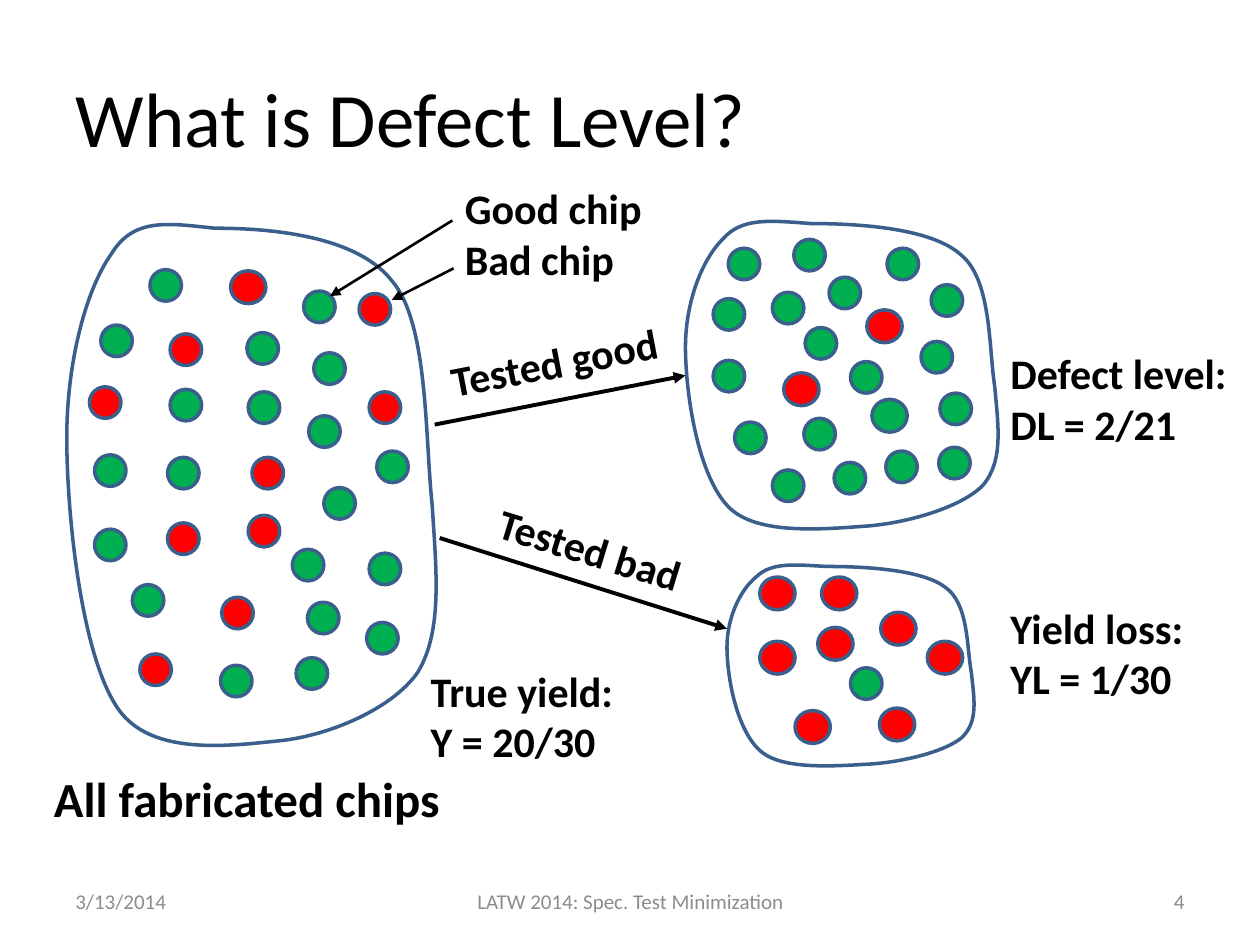
from lxml.etree import SubElement
from pptx import Presentation
from pptx.dml.color import RGBColor
from pptx.enum.shapes import MSO_CONNECTOR as LINK, MSO_SHAPE as SHAPE
from pptx.enum.text import MSO_ANCHOR as ANCHOR, PP_ALIGN as ALIGN
from pptx.oxml.ns import qn
from pptx.util import Inches, Pt

hue = RGBColor.from_string
GREEN, RED, BLUE, BLACK, GRAY = "00B050", "FF0000", "3A5F8C", "000000", "8C8C8C"
CELL = Inches(0.1)  # the slide is a grid of 100 columns by 75 rows


def grid(*cells):
    return [int(cell * CELL) for cell in cells]


def write(text, box, shape=None, size=24, color=BLACK, bold=True, turn=0,
          wrap=True, align=ALIGN.LEFT, anchor=ANCHOR.TOP):
    shape = shape or shapes.add_textbox(0, 0, 0, 0)
    shape.left, shape.top, shape.width, shape.height = grid(*box)
    shape.rotation = turn
    frame = shape.text_frame
    frame.text = text
    frame.word_wrap = wrap
    frame.vertical_anchor = anchor
    for para in frame.paragraphs:
        para.alignment = align
        font = para.runs[0].font
        font.name, font.size, font.bold = "Calibri", Pt(size), bold
        font.color.rgb = hue(color)


deck = Presentation()
deck.slide_width, deck.slide_height = grid(100, 75)
slide = deck.slides.add_slide(deck.slide_layouts[5])
shapes = slide.shapes

# Title and footer
write("What is Defect Level?", (5, 3, 90, 12.5), shape=shapes.title, size=44,
      bold=False, anchor=ANCHOR.MIDDLE)
for text, left, width, align in [
    ("3/13/2014", 5, 23.3, ALIGN.LEFT),
    ("LATW 2014: Spec. Test Minimization", 34.2, 31.7, ALIGN.CENTER),
    ("4", 71.7, 23.3, ALIGN.RIGHT),
]:
    write(text, (left, 69.5, width, 4), size=12, color=GRAY, bold=False,
          align=align, anchor=ANCHOR.MIDDLE)

# Pools: one curved outline in shares of its box, three points to a curve
START = (0.4, 0.01)
CURVE = [
    (0.53, 0.01), (0.78, 0.02), (0.88, 0.11),
    (0.98, 0.19), (0.97, 0.41), (0.99, 0.54),
    (1.0, 0.66), (1.02, 0.78), (0.95, 0.86),
    (0.88, 0.93), (0.71, 0.98), (0.58, 0.99),
    (0.44, 1.0), (0.23, 1.02), (0.14, 0.93),
    (0.04, 0.83), (0, 0.56), (0, 0.41),
    (0, 0.27), (0.05, 0.13), (0.12, 0.06),
    (0.18, -0.01), (0.27, 0), START,
]
for left, top, width, height in [
    (5.3, 17.7, 29.3, 41.5),   # all chips
    (54.4, 17.5, 24.8, 24.5),  # tested good
    (57.7, 44.8, 19.6, 16),    # tested bad
]:
    first, *rest = [grid(left + x * width, top + y * height)
                    for x, y in [START] + CURVE]
    form = shapes.build_freeform(*first)
    form.add_line_segments(rest, close=True)
    pool = form.convert_to_shape()
    pool.shadow.inherit = False
    pool.fill.background()
    pool.line.color.rgb, pool.line.width = hue(BLUE), Pt(2)
    # Turn each three straight segments into one Bézier curve
    steps = list(pool._element.iter(qn("a:lnTo")))
    for i in range(0, len(steps), 3):
        bend = steps[i]
        bend.tag = qn("a:cubicBezTo")
        for step in steps[i + 1:i + 3]:
            bend.append(step[0])
            step.getparent().remove(step)

# Chips: colour, width, height and top left corners
CHIPS = [
    (GREEN, 2.5, 2.5, [
        # all chips
        (11.9, 21.4), (24.1, 23.1), (19.6, 26.4), (24.9, 28), (13.5, 30.9),
        (19.7, 31.1), (24.5, 33), (8, 25.8), (10.5, 46.4), (29.3, 43.9),
        (25.7, 38.7), (7.5, 42), (29.9, 35.8), (13.3, 36.3), (7.5, 36.1),
        (17.5, 52.8), (23.5, 52.2), (29.1, 49.4), (24.4, 47.8), (23.2, 43.6),
        # tested good
        (57.8, 19.7), (56.6, 23.7), (63, 19), (61.3, 23.2), (63.9, 26),
        (56.6, 28.6), (65.8, 22), (70.4, 19.7), (58.3, 33.5), (63.8, 33.2),
        (74.6, 31.2), (67.5, 28.7), (73.1, 27.1), (73.9, 22.6), (61.3, 37.3),
        (66.2, 36.7), (70.3, 35.8), (74.5, 35.5),
        # tested bad
        (67.5, 53)]),
    (GREEN, 2.8, 2.6, [(69.2, 31.7)]),
    (RED, 2.5, 2.5, [
        (13.5, 26.5), (7.1, 30.7), (29.3, 31.1), (17.6, 47.4), (19.7, 40.9),
        (20, 36.3), (13.3, 41.5), (28.5, 23.3), (11.1, 51.9)]),
    (RED, 2.8, 2.6, [
        (18.3, 21.5), (68.8, 24.6), (62.2, 29.6),
        (63.1, 56.4), (69.8, 56.2), (73.6, 50.9), (69.9, 48.6), (60.3, 50.9),
        (64.9, 49.8), (60.3, 45.8), (65.2, 45.8)]),
]
for color, width, height, spots in CHIPS:
    for left, top in spots:
        chip = shapes.add_shape(SHAPE.OVAL, *grid(left, top, width, height))
        chip.shadow.inherit = False
        chip.fill.solid()
        chip.fill.fore_color.rgb = hue(color)
        chip.line.color.rgb, chip.line.width = hue(BLUE), Pt(2)

# Arrows
for ends, weight in [
    ((34.5, 33.7, 54.4, 29.8), 2.25),
    ((34.9, 42.7, 57.7, 49.9), 2.25),
    ((35.9, 17.5, 26.2, 23.5), 1.5),
    ((36, 21.3, 31.1, 23.8), 1.5),
]:
    arrow = shapes.add_connector(LINK.STRAIGHT, *grid(*ends))
    arrow.line.color.rgb, arrow.line.width = hue(BLACK), Pt(weight)
    SubElement(arrow.line._get_or_add_ln(), qn("a:tailEnd"), type="triangle")
    SubElement(arrow._element.spPr, qn("a:effectLst"))

# Labels
write("Tested good", (34.7, 26.2, 18.6, 5), turn=349)
write("Tested bad", (38.4, 41.1, 17.1, 5), turn=17, wrap=False)
write("All fabricated chips", (3.3, 60.5, 34.4, 5.7), size=28)
write("Good chip\nBad chip", (35.9, 14, 16.2, 9.1), wrap=False)
write("Defect level:\nDL = 2/21", (79.2, 27.1, 20, 9.1))
write("Yield loss:\nYL = 1/30", (79.2, 47.3, 20, 9.1))
write("True yield:\nY = 20/30", (33.2, 52.3, 18.7, 9.1))

deck.save("out.pptx")
